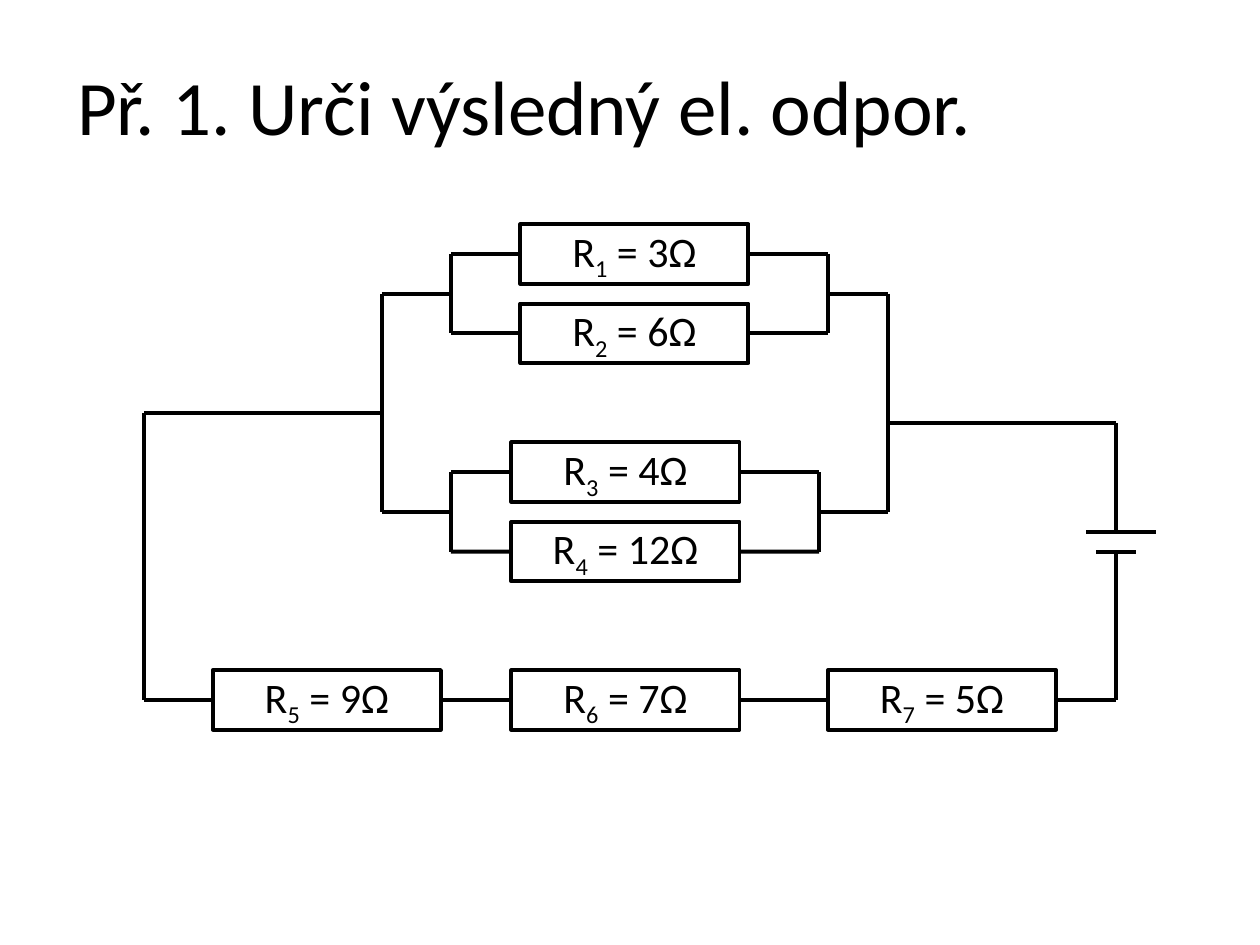
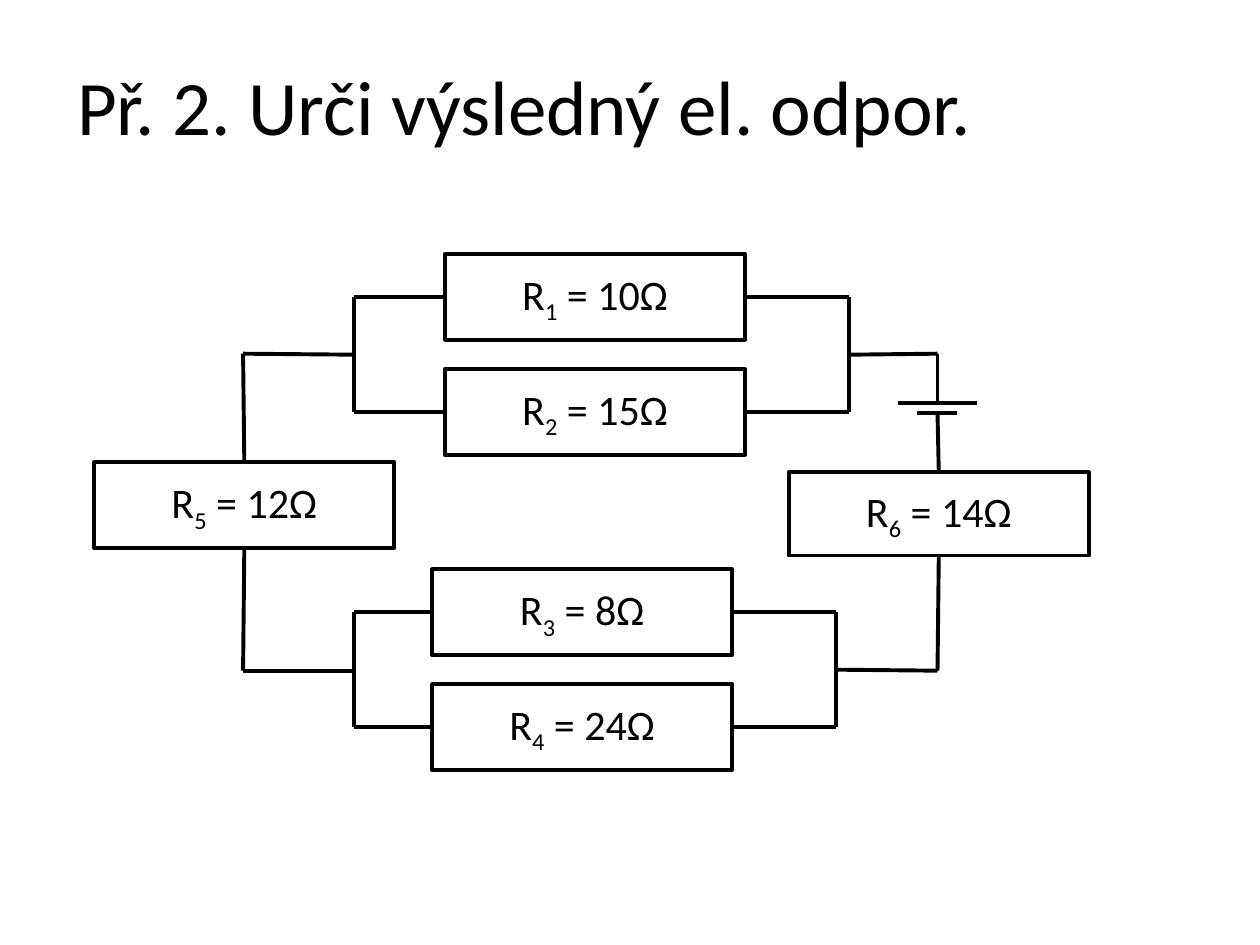
from lxml import etree
from pptx import Presentation
from pptx.dml.color import RGBColor
from pptx.enum.shapes import MSO_CONNECTOR, MSO_SHAPE
from pptx.enum.text import MSO_ANCHOR, PP_ALIGN
from pptx.oxml.ns import qn
from pptx.util import Cm, Pt

STRAIGHT = MSO_CONNECTOR.STRAIGHT
RECTANGLE = MSO_SHAPE.RECTANGLE
MIDDLE = MSO_ANCHOR.MIDDLE
CENTER, JUSTIFY = PP_ALIGN.CENTER, PP_ALIGN.JUSTIFY
TOP, LEFT, BOTTOM, RIGHT = range(4)

BLACK = RGBColor.from_string("000000")
FONT = "Calibri"
LINE_WIDTH = Pt(2.25)

# Lengths are in cm. A resistor is number: (ohms, left, top, width, height).
# A parallel pair is (upper, lower, left rail x, right rail x).
# A wire end is a point (x, y) or a resistor's side (number, side).
circuits = [
    {
        "title": "Př. 1. Urči výsledný el. odpor.",
        "resistors": {
            "1": (3, 10.49, 4.52, 4.6, 1.2),
            "2": (6, 10.49, 6.12, 4.6, 1.2),
            "3": (4, 10.31, 8.92, 4.6, 1.2),
            "4": (12, 10.31, 10.52, 4.6, 1.2),
            "5": (9, 4.29, 13.51, 4.6, 1.2),
            "6": (7, 10.31, 13.51, 4.6, 1.2),
            "7": (5, 16.69, 13.51, 4.6, 1.2),
        },
        "pairs": [("1", "2", 9.09, 16.69), ("3", "4", 9.09, 16.51)],
        "wires": [
            # both pairs joined in parallel
            ((7.7, 5.92), (9.09, 5.92)),
            ((7.7, 10.32), (9.09, 10.32)),
            ((7.7, 5.92), (7.7, 10.32)),
            ((16.69, 5.92), (17.91, 5.92)),
            ((16.51, 10.32), (17.91, 10.32)),
            ((17.91, 5.92), (17.91, 10.32)),
            # series branch and outer loop
            ((7.7, 8.32), (2.9, 8.32)),
            ((2.9, 8.32), (2.9, 14.11)),
            ((2.9, 14.11), ("5", LEFT)),
            (("5", RIGHT), ("6", LEFT)),
            (("6", RIGHT), ("7", LEFT)),
            (("7", RIGHT), (22.5, 14.11)),
            ((22.5, 14.11), (22.5, 11.12)),
            ((22.5, 10.72), (22.5, 8.52)),
            ((22.5, 8.52), (17.91, 8.52)),
            # battery plates
            ((21.9, 10.72), (23.3, 10.72)),
            ((22.1, 11.12), (22.9, 11.12)),
        ],
    },
    {
        "title": "Př. 2. Urči výsledný el. odpor.",
        "resistors": {
            "1": (10, 8.97, 5.12, 6.05, 1.73),
            "2": (15, 8.97, 7.44, 6.05, 1.73),
            "3": (8, 8.71, 11.48, 6.05, 1.73),
            "4": (24, 8.71, 13.79, 6.05, 1.73),
            "5": (12, 1.9, 9.32, 6.05, 1.73),
            "6": (14, 15.9, 9.52, 6.05, 1.68),
        },
        "pairs": [("1", "2", 7.14, 17.12), ("3", "4", 7.14, 16.86)],
        "wires": [
            # left side of the loop
            ((4.9, 7.13), (7.14, 7.15)),
            (("5", TOP), (4.9, 7.13)),
            (("5", BOTTOM), (4.9, 13.52)),
            ((4.9, 13.52), (7.14, 13.52)),
            # right side of the loop
            ((17.12, 7.15), (18.9, 7.13)),
            ((18.9, 7.13), (18.9, 8.13)),
            (("6", TOP), (18.9, 8.33)),
            (("6", BOTTOM), (18.9, 13.52)),
            ((16.86, 13.5), (18.9, 13.52)),
            # battery plates
            ((18.11, 8.13), (19.69, 8.13)),
            ((18.49, 8.33), (19.3, 8.33)),
        ],
    },
]


def add_wire(slide, boxes, start, end):
    """Draw a line between two ends, each a point or a resistor's side."""
    points = [(0, 0) if site[0] in boxes else site for site in (start, end)]
    wire = slide.shapes.add_connector(
        STRAIGHT, *(Cm(length) for point in points for length in point))
    if start[0] in boxes:
        wire.begin_connect(boxes[start[0]], start[1])
    if end[0] in boxes:
        wire.end_connect(boxes[end[0]], end[1])
    wire.line.color.rgb = BLACK
    wire.line.width = LINE_WIDTH
    etree.SubElement(wire._element.spPr, qn("a:effectLst"))


def style_paragraph(paragraph, size, alignment):
    paragraph.alignment = alignment
    paragraph.font.name = FONT
    paragraph.font.size = Pt(size)
    paragraph.font.color.rgb = BLACK


prs = Presentation()
prs.slide_width, prs.slide_height = Cm(25.4), Cm(19.05)

for circuit in circuits:
    slide = prs.slides.add_slide(prs.slide_layouts[5])
    title = slide.shapes.title
    title.left, title.top = Cm(1.3), Cm(0.73)
    title.width, title.height = Cm(22.86), Cm(2.77)
    title.text_frame.text = circuit["title"]
    title.text_frame.vertical_anchor = MIDDLE
    style_paragraph(title.text_frame.paragraphs[0], 44, JUSTIFY)

    boxes = {}
    for number, (ohms, *frame) in circuit["resistors"].items():
        box = slide.shapes.add_shape(RECTANGLE, *(Cm(length) for length in frame))
        box.shadow.inherit = False
        box.fill.background()
        box.line.color.rgb = BLACK
        box.line.width = LINE_WIDTH
        box.text_frame.vertical_anchor = MIDDLE
        label = box.text_frame.paragraphs[0]
        style_paragraph(label, 24, CENTER)
        for text in ("R", number, f" = {ohms}Ω"):
            run = label.add_run()
            run.text = text
            if text == number:
                run._r.get_or_add_rPr().set("baseline", "-25000")
        boxes[number] = box

    for upper, lower, left_rail, right_rail in circuit["pairs"]:
        middles = [(boxes[number].top + boxes[number].height / 2) / Cm(1)
                   for number in (upper, lower)]
        for rail, side in ((left_rail, LEFT), (right_rail, RIGHT)):
            for number, middle in zip((upper, lower), middles):
                add_wire(slide, boxes, (number, side), (rail, middle))
            add_wire(slide, boxes, (rail, middles[0]), (rail, middles[1]))

    for start, end in circuit["wires"]:
        add_wire(slide, boxes, start, end)

prs.save("out.pptx")
